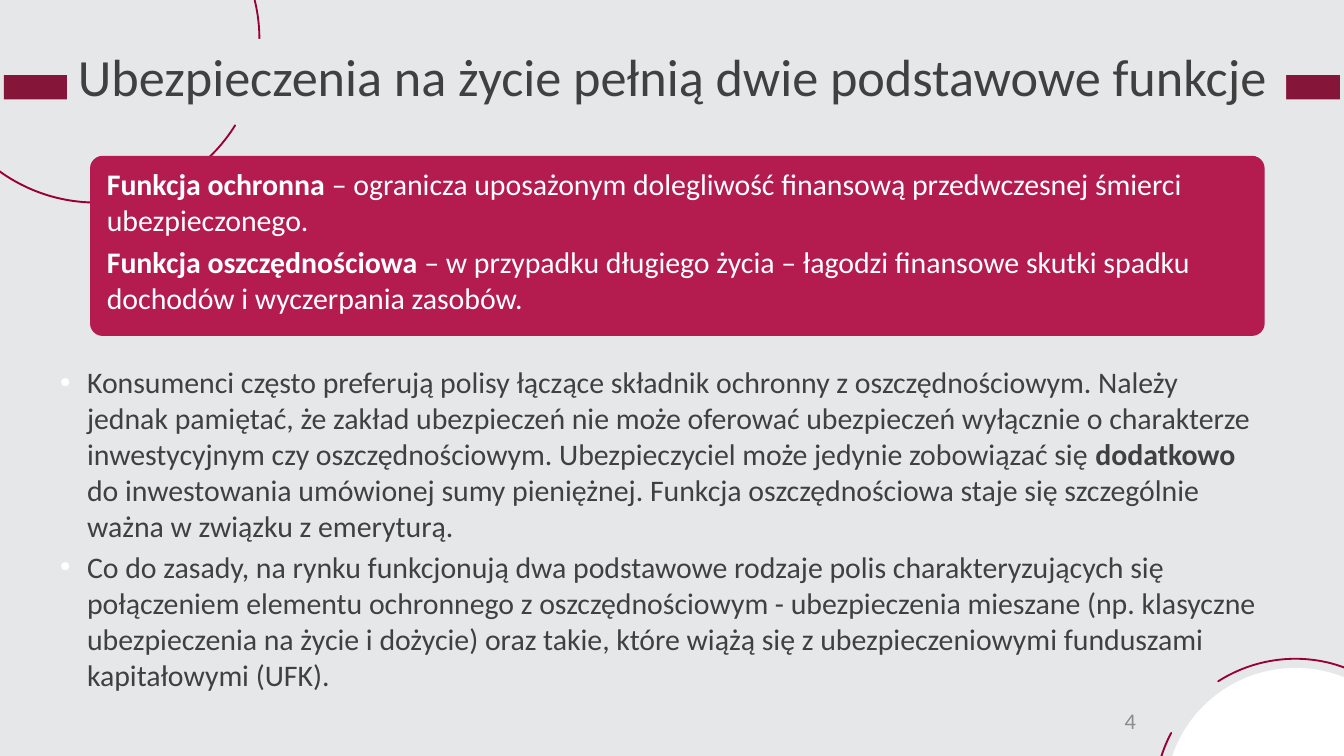
"""Build a slide on the two basic functions of life insurance."""
from lxml import etree
from pptx import Presentation
from pptx.dml.color import RGBColor
from pptx.enum.shapes import MSO_SHAPE
from pptx.enum.text import MSO_ANCHOR, PP_ALIGN
from pptx.oxml.ns import qn
from pptx.util import Inches, Pt

BLOCK_ARC = MSO_SHAPE.BLOCK_ARC
OVAL = MSO_SHAPE.OVAL
RECTANGLE = MSO_SHAPE.RECTANGLE
ROUNDED_RECTANGLE = MSO_SHAPE.ROUNDED_RECTANGLE
TOP = MSO_ANCHOR.TOP
MIDDLE = MSO_ANCHOR.MIDDLE
LEFT = PP_ALIGN.LEFT
RIGHT = PP_ALIGN.RIGHT

BACKGROUND = RGBColor(0xE6, 0xE7, 0xE9)
MAROON = RGBColor(0x86, 0x15, 0x3A)
ARC_LINE = RGBColor(0x99, 0x00, 0x33)
CRIMSON = RGBColor(0xB4, 0x1C, 0x4F)
WHITE = RGBColor(0xFF, 0xFF, 0xFF)
DARK_GREY = RGBColor(0x40, 0x40, 0x40)
PAGE_GREY = RGBColor(0x8C, 0x8C, 0x8C)

FONT = "Calibri"
DEFAULT_INSETS = (0.1, 0.05, 0.1, 0.05)

TITLE = "Ubezpieczenia na życie pełnią dwie podstawowe funkcje"
FUNCTIONS = [
    [("Funkcja ochronna ", True),
     ("– ogranicza uposażonym dolegliwość finansową przedwczesnej śmierci "
      "ubezpieczonego.", False)],
    [("Funkcja oszczędnościowa ", True),
     ("– w przypadku długiego życia – łagodzi finansowe skutki spadku "
      "dochodów i wyczerpania zasobów.", False)],
]
REMARKS = [
    [("Konsumenci często preferują polisy łączące składnik ochronny z "
      "oszczędnościowym. Należy jednak pamiętać, że zakład ubezpieczeń nie "
      "może oferować ubezpieczeń wyłącznie o charakterze inwestycyjnym czy "
      "oszczędnościowym. Ubezpieczyciel może jedynie zobowiązać się ", False),
     ("dodatkowo ", True),
     ("do inwestowania umówionej sumy pieniężnej. Funkcja oszczędnościowa "
      "staje się szczególnie ważna w związku z emeryturą.", False)],
    [("Co do zasady, na rynku funkcjonują dwa podstawowe rodzaje polis "
      "charakteryzujących się połączeniem elementu ochronnego z "
      "oszczędnościowym - ubezpieczenia mieszane (np. klasyczne ubezpieczenia "
      "na życie i dożycie) oraz takie, które wiążą się z ubezpieczeniowymi "
      "funduszami kapitałowymi (UFK).", False)],
]


def add_filled_shape(slide, kind, box, color):
    """Add a flat preset shape without outline or shadow."""
    shape = slide.shapes.add_shape(kind, *map(Inches, box))
    shape.shadow.inherit = False
    shape.fill.solid()
    shape.fill.fore_color.rgb = color
    shape.line.fill.background()
    return shape


def add_arc(slide, box, rotation, start):
    """Add a hairline arc from its start adjustment."""
    arc = add_filled_shape(slide, BLOCK_ARC, box, MAROON)
    arc.rotation = rotation
    for index, value in enumerate((start, 1.76, 0)):
        arc.adjustments[index] = value
    arc.line.color.rgb = ARC_LINE
    arc.line.width = Pt(1)


def add_text_box(slide, box):
    """Add an empty text box."""
    return slide.shapes.add_textbox(*map(Inches, box))


def add_bullet(paragraph):
    """Give a paragraph a white bullet with a hanging indent."""
    properties = paragraph._p.get_or_add_pPr()
    properties.set("marL", str(Inches(0.2)))
    properties.set("indent", str(-Inches(0.2)))
    bullet_color = etree.SubElement(properties, qn("a:buClr"))
    etree.SubElement(bullet_color, qn("a:srgbClr")).set("val", str(WHITE))
    etree.SubElement(properties, qn("a:buFont")).set("typeface", "Arial")
    etree.SubElement(properties, qn("a:buChar")).set("char", "•")


def write_text(shape, paragraphs, size, color, insets=DEFAULT_INSETS,
               anchor=TOP, align=LEFT, space_before=0, bullets=False):
    """Fill a shape with paragraphs of (text, bold) runs."""
    frame = shape.text_frame
    frame.word_wrap = True
    frame.vertical_anchor = anchor
    (frame.margin_left, frame.margin_top,
     frame.margin_right, frame.margin_bottom) = map(Inches, insets)
    for index, runs in enumerate(paragraphs):
        paragraph = frame.add_paragraph() if index else frame.paragraphs[0]
        paragraph.alignment = align
        paragraph.space_before = Pt(space_before)
        if bullets:
            add_bullet(paragraph)
        for text, bold in runs:
            run = paragraph.add_run()
            run.text = text
            run.font.name = FONT
            run.font.size = Pt(size)
            run.font.bold = bold
            run.font.color.rgb = color


def add_decoration(slide):
    """Add the corner arcs, the title bar and the white disc."""
    add_arc(slide, (-0.51, -0.93, 2.44, 2.45), 12.3, 170.46)
    add_arc(slide, (-0.51, -0.94, 2.44, 2.45), 132.3, 155.79)
    add_filled_shape(slide, RECTANGLE, (0.03, 0.56, 9.94, 0.18), MAROON)
    add_arc(slide, (8.59, 4.92, 2.11, 2.06), 205.2, 170.46)
    add_arc(slide, (8.56, 4.91, 2.11, 2.06), 325.2, 163.48)
    disc = add_filled_shape(slide, OVAL, (8.67, 4.97, 1.94, 1.94), WHITE)
    disc.rotation = 7


def main():
    """Build and save the presentation."""
    presentation = Presentation()
    presentation.slide_width = Inches(10)
    presentation.slide_height = Inches(10 * 9 / 16)
    slide = presentation.slides.add_slide(presentation.slide_layouts[6])
    slide.background.fill.solid()
    slide.background.fill.fore_color.rgb = BACKGROUND

    add_decoration(slide)

    panel = add_filled_shape(slide, ROUNDED_RECTANGLE,
                             (0.67, 1.16, 8.74, 1.34), CRIMSON)
    panel.adjustments[0] = 0.07
    write_text(panel, FUNCTIONS, 16, WHITE, space_before=3)

    title = add_filled_shape(slide, RECTANGLE, (0.5, 0.29, 9.07, 0.63),
                             BACKGROUND)
    write_text(title, [[(TITLE, False)]], 28, DARK_GREY,
               insets=(0.08, 0.04, 0.08, 0.12))

    page_number = add_text_box(slide, (7.17, 5.21, 1.38, 0.3))
    write_text(page_number, [[("4", False)]], 12, PAGE_GREY,
               anchor=MIDDLE, align=RIGHT)

    remarks = add_text_box(slide, (0.35, 2.66, 9.07, 2.68))
    write_text(remarks, REMARKS, 16, DARK_GREY, insets=(0.1, 0.05, 0, 0.05),
               space_before=3, bullets=True)

    presentation.save("out.pptx")


if __name__ == "__main__":
    main()
